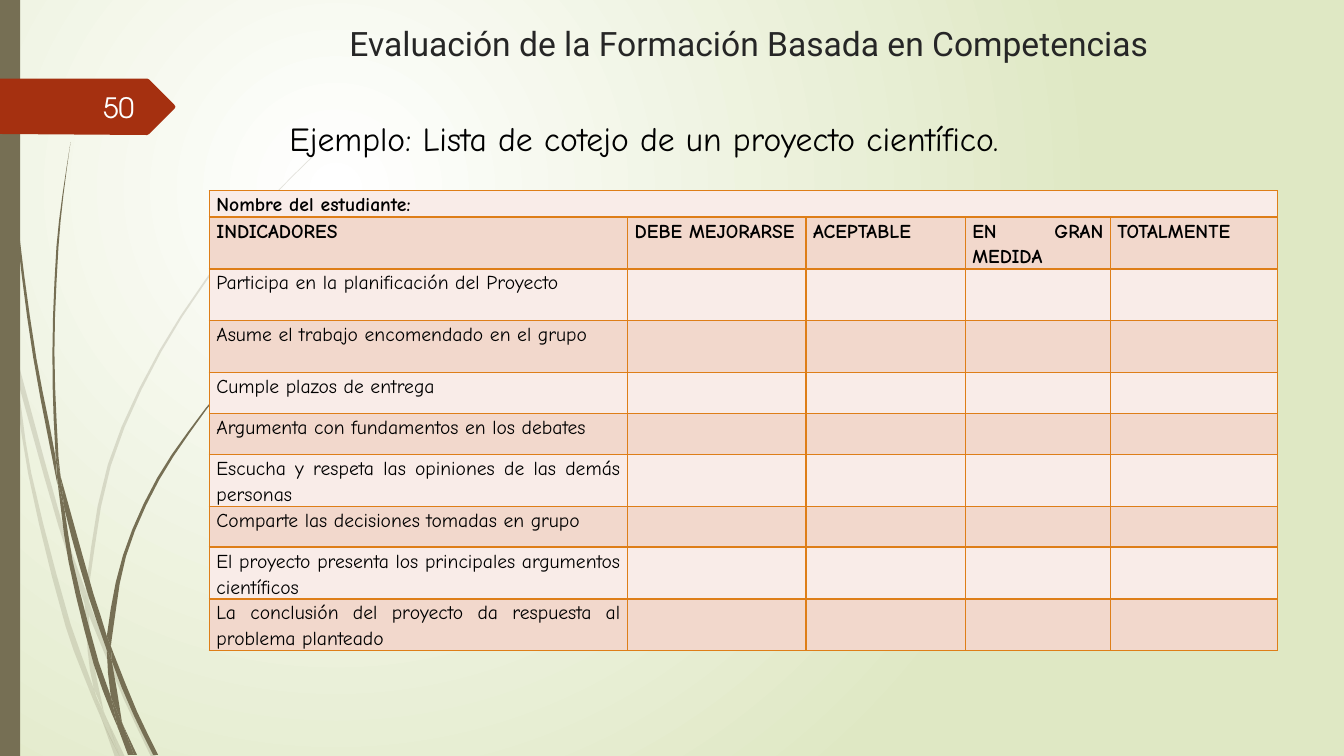
"""Builds the checklist slide for a science project assessment."""
from dataclasses import dataclass
from math import ceil
from typing import NamedTuple

from lxml import etree
from pptx import Presentation
from pptx.dml.color import RGBColor
from pptx.enum.shapes import MSO_SHAPE
from pptx.enum.text import MSO_ANCHOR, MSO_AUTO_SIZE, PP_ALIGN
from pptx.oxml.ns import qn
from pptx.util import Emu, Pt

RECTANGLE, FIXED = MSO_SHAPE.RECTANGLE, MSO_AUTO_SIZE.NONE
TOP, MIDDLE = MSO_ANCHOR.TOP, MSO_ANCHOR.MIDDLE
CENTER, RIGHT, JUSTIFY = PP_ALIGN.CENTER, PP_ALIGN.RIGHT, PP_ALIGN.JUSTIFY
GRID_COLUMNS, GRID_ROWS, CELL, TITLE_ONLY = 40, 22.5, 304800, 5
Edge = list[tuple[float, float]]


@dataclass(frozen=True)
class Theme:
    olive: str = "766F54"
    red: str = "A53010"
    glow: tuple[str, str] = ("FFFFFF", "DFE8C4")
    border: str = "DE7E18"
    bands: tuple[str, str] = ("F9ECE8", "F2D8CC")
    ink: str = "000000"
    title_ink: str = "262626"
    number_ink: str = "FEFFFF"
    body_font: str = "Comic Neue"
    heading_size: int = 24
    number_size: int = 20
    table_size: int = 14


class Area(NamedTuple):
    left: float
    top: float
    width: float
    height: float


class Blade(NamedTuple):
    left: Edge
    right: Edge


class TextStyle(NamedTuple):
    font: str
    size: int
    color: str
    align: int
    bold: bool = False
    spacing: float = 1.0


THEME = Theme()
TITLE_STYLE = TextStyle("Roboto", THEME.heading_size, THEME.title_ink, CENTER)
NUMBER_STYLE = TextStyle("TeX Gyre Adventor", THEME.number_size, THEME.number_ink, RIGHT)
EXAMPLE_STYLE = TextStyle(THEME.body_font, THEME.heading_size, THEME.ink, JUSTIFY, spacing=1.15)
INDICATOR_STYLE = EXAMPLE_STYLE._replace(size=THEME.table_size)
HEADER_STYLE = INDICATOR_STYLE._replace(bold=True)

PALE_GRASS = [
    Blade([(0, 8.97), (.3, 10.32), (.33, 10.5)], [(0, 8.46), (.27, 9.66), (.33, 10.5)]),
    Blade([(.51, 11.28), (1.74, 15.66), (2.52, 17.97)], [(.42, 10.35), (1.86, 15.6), (2.55, 17.58)]),
    Blade([(2.64, 18.3), (3.69, 20.82), (4.5, 22.53)],
          [(2.64, 17.88), (2.76, 18.21), (3.81, 20.76), (4.65, 22.53)]),
    Blade([(3.15, 21.33), (3.57, 22.53)], [(3.15, 21.33), (3.72, 22.53)]),
    Blade([(.33, 10.5), (.84, 14.1), (1.95, 18.63), (2.76, 20.79), (3.03, 21.42)],
          [(.33, 10.5), (.51, 11.28), (.93, 14.07), (2.1, 18.57), (2.79, 20.49), (3.03, 21.42)]),
    Blade([(2.52, 17.97), (2.61, 19.38), (2.79, 20.49), (3.15, 21.33)],
          [(2.52, 17.97), (2.64, 18.3), (2.73, 19.38), (3.09, 21.18), (3.15, 21.33)]),
    Blade([(9.36, 4.59), (8.04, 5.91), (6.84, 7.32), (4.74, 10.44), (3.21, 13.83), (2.55, 17.52), (2.64, 17.88)],
          [(9.36, 4.62), (8.04, 5.94), (6.87, 7.35), (4.8, 10.47), (3.3, 13.86), (2.64, 17.52), (2.64, 17.88)]),
    Blade([(3.03, 21.42), (3.42, 22.53)], [(3.03, 21.42), (3.57, 22.53)]),
    Blade([(2.55, 17.58), (2.52, 17.97), (2.64, 18.3)], [(2.55, 17.58), (2.64, 17.88), (2.64, 18.3)]),
    Blade([(2.79, 20.49), (3.03, 21.42), (3.57, 22.53)],
          [(2.79, 20.49), (2.88, 20.76), (3.15, 21.33), (3.57, 22.53)]),
]
DARK_GRASS = [
    Blade([(.09, 0), (.09, 1.44), (.21, 3.3), (.51, 6.99), (.99, 10.65), (1.71, 14.43)],
          [(.09, 0), (.15, 1.44), (.24, 3.27), (.57, 6.96), (1.08, 10.65), (1.65, 13.59), (1.71, 14.43)]),
    Blade([(1.8, 14.16), (1.92, 15.15), (2.64, 17.76), (3.18, 19.35)],
          [(1.8, 14.16), (2.79, 17.7), (3.18, 18.93), (3.18, 19.35)]),
    Blade([(3.3, 19.23), (3.33, 19.68), (3.96, 21.24), (4.56, 22.47)],
          [(3.3, 19.23), (3.39, 19.47), (4.08, 21.18), (4.71, 22.47)]),
    Blade([(1.71, 14.31), (2.04, 16.71), (2.79, 19.77), (3.33, 21.24), (3.51, 21.66)],
          [(1.71, 14.31), (1.92, 15.15), (2.16, 16.68), (2.94, 19.71), (3.3, 20.73), (3.51, 21.66)]),
    Blade([(2.1, 4.23), (1.86, 5.79), (1.68, 7.35), (1.56, 10.47), (1.65, 13.47), (1.8, 14.16)],
          [(2.1, 4.23), (1.89, 5.79), (1.74, 7.35), (1.62, 10.47), (1.74, 13.59), (1.8, 14.16)]),
    Blade([(3.66, 21.57), (3.99, 22.47)], [(3.66, 21.57), (4.08, 22.47)]),
    Blade([(1.65, 13.47), (1.71, 14.31), (1.92, 15.15)], [(1.65, 13.47), (1.8, 14.16), (1.92, 15.15)]),
    Blade([(7.8, 10.32), (6.93, 11.19), (6.12, 12.15), (4.68, 14.22), (3.66, 16.53), (3.18, 18.93), (3.3, 19.23)],
          [(7.83, 10.32), (6.93, 11.22), (6.15, 12.18), (4.74, 14.28), (3.75, 16.56), (3.33, 18.99), (3.3, 19.23)]),
    Blade([(3.51, 21.66), (3.81, 22.47)], [(3.51, 21.66), (3.93, 22.47)]),
    Blade([(3.18, 19.35), (3.3, 20.73), (3.66, 21.57)], [(3.18, 19.35), (3.33, 19.68), (3.63, 21.48), (3.66, 21.57)]),
    Blade([(3.18, 18.93), (3.18, 19.35), (3.33, 19.68)], [(3.18, 18.93), (3.3, 19.23), (3.33, 19.68)]),
    Blade([(3.3, 20.73), (3.51, 21.66), (3.9, 22.47)], [(3.3, 20.73), (3.66, 21.57), (3.99, 22.47)]),
]
BANNER = [(-.03, 3.99), (0, 2.34), (4.38, 2.34), (4.44, 2.37), (5.19, 3.12),
          (5.22, 3.18), (5.19, 3.24), (4.44, 3.99), (4.38, 4.02)]

STRIPE_AREA = Area(0, 0, .6, GRID_ROWS)
NUMBER_AREA = Area(1.74, 2.58, 2.55, 1.2)
TITLE_AREA = Area(6.54, .54, 31.5, 2.04)
EXAMPLE_AREA = Area(8.32, 3.18, 28.77, 1.71)
CHECKLIST_COLUMNS = [12.45, 5.31, 4.74, 4.32, 4.98]
ONE_LINE, TWO_LINES, HEADER_ROWS = 1.22, 1.54, 2
CHECKLIST = [
    (.78, ["Nombre del estudiante:"]),
    (TWO_LINES, ["INDICADORES", "DEBE MEJORARSE", "ACEPTABLE", "EN GRAN MEDIDA", "TOTALMENTE"]),
    (TWO_LINES, ["Participa en la planificación del Proyecto"]),
    (TWO_LINES, ["Asume el trabajo encomendado en el grupo"]),
    (ONE_LINE, ["Cumple plazos de entrega"]),
    (ONE_LINE, ["Argumenta con fundamentos en los debates"]),
    (TWO_LINES, ["Escucha y respeta las opiniones de las demás personas"]),
    (ONE_LINE, ["Comparte las decisiones tomadas en grupo"]),
    (TWO_LINES, ["El proyecto presenta los principales argumentos científicos"]),
    (TWO_LINES, ["La conclusión del proyecto da respuesta al problema planteado"]),
]
CHECKLIST_AREA = Area(6.23, 5.68, sum(CHECKLIST_COLUMNS), sum(height for height, _ in CHECKLIST))


def grid(units: float) -> Emu:
    return Emu(round(units * CELL))


def place(area: Area) -> list[Emu]:
    return [grid(side) for side in area]


def write(frame, text: str, style: TextStyle, anchor: int = TOP) -> None:
    frame.word_wrap, frame.vertical_anchor = True, anchor
    paragraph = frame.paragraphs[0]
    paragraph.alignment, paragraph.line_spacing = style.align, style.spacing
    run = paragraph.add_run()
    run.text = text
    run.font.name, run.font.size, run.font.bold = style.font, Pt(style.size), style.bold
    run.font.color.rgb = RGBColor.from_string(style.color)


def paint(shape, color: str, opacity: int = 100) -> None:
    shape.shadow.inherit = False
    shape.line.fill.background()
    shape.fill.solid()
    shape.fill.fore_color.rgb = RGBColor.from_string(color)
    if opacity < 100:
        tint = shape.fill._xPr.find(".//" + qn("a:srgbClr"))
        etree.SubElement(tint, qn("a:alpha"), val=str(opacity * 1000))


def add_outline(slide, points: Edge, color: str, opacity: int = 100) -> None:
    corners = [(grid(x), grid(y)) for x, y in points]
    builder = slide.shapes.build_freeform(*corners[0])
    builder.add_line_segments(corners[1:], close=True)
    paint(builder.convert_to_shape(), color, opacity)


def smooth(edge: Edge) -> Edge:
    neighbours = zip(edge[:1] + edge[:-1], edge[1:] + edge[-1:])
    slopes = [(x2 - x1) / (y2 - y1) for (x1, y1), (x2, y2) in neighbours]
    curve = edge[:1]
    for (x1, y1), (x2, y2), start, end in zip(edge, edge[1:], slopes, slopes[1:]):
        drop = y2 - y1
        steps = min(3, ceil(drop))
        for t in (step / steps for step in range(1, steps + 1)):
            bend = drop * t * (1 - t) * (start * (1 - t) - end * t)
            curve.append((x1 + (x2 - x1) * t * t * (3 - 2 * t) + bend, y1 + drop * t))
    return curve


def set_background(slide) -> None:
    fill = slide.background.fill
    fill.gradient()
    for position, (stop, color) in enumerate(zip(fill.gradient_stops, THEME.glow)):
        stop.color.rgb, stop.position = RGBColor.from_string(color), position
    gradient = slide._element.find(".//" + qn("a:gradFill"))
    radial = etree.Element(qn("a:path"), path="circle")
    etree.SubElement(radial, qn("a:fillToRect"), l="50000", t="50000", r="100000", b="100000")
    gradient.replace(gradient.find(qn("a:lin")), radial)


def format_cell(cell, color: str) -> None:
    for side in ("lnL", "lnR", "lnT", "lnB"):
        line = etree.SubElement(cell._tc.get_or_add_tcPr(), qn("a:" + side), w=str(Pt(1)))
        etree.SubElement(etree.SubElement(line, qn("a:solidFill")), qn("a:srgbClr"), val=THEME.border)
    cell.margin_left = cell.margin_right = grid(.21)
    cell.margin_top = cell.margin_bottom = 0
    cell.fill.solid()
    cell.fill.fore_color.rgb = RGBColor.from_string(color)


def add_checklist(slide) -> None:
    table = slide.shapes.add_table(len(CHECKLIST), len(CHECKLIST_COLUMNS), *place(CHECKLIST_AREA)).table
    table.first_row = table.horz_banding = False
    for column, width in zip(table.columns, CHECKLIST_COLUMNS):
        column.width = grid(width)
    for i, (height, texts) in enumerate(CHECKLIST):
        table.rows[i].height = grid(height)
        for cell in table.rows[i].cells:
            format_cell(cell, THEME.bands[i % 2])
        for cell, text in zip(table.rows[i].cells, texts):
            write(cell.text_frame, text, HEADER_STYLE if i < HEADER_ROWS else INDICATOR_STYLE)
    table.cell(0, 0).merge(table.cell(0, len(CHECKLIST_COLUMNS) - 1))


def main() -> None:
    deck = Presentation()
    deck.slide_width, deck.slide_height = grid(GRID_COLUMNS), grid(GRID_ROWS)
    slide = deck.slides.add_slide(deck.slide_layouts[TITLE_ONLY])
    set_background(slide)
    for grass, opacity in ((PALE_GRASS, 20), (DARK_GRASS, 100)):
        for blade in grass:
            add_outline(slide, smooth(blade.left) + smooth(blade.right)[::-1], THEME.olive, opacity)
    paint(slide.shapes.add_shape(RECTANGLE, *place(STRIPE_AREA)), THEME.olive)
    add_outline(slide, BANNER, THEME.red)
    add_checklist(slide)
    number = slide.shapes.add_textbox(*place(NUMBER_AREA))
    write(number.text_frame, "50", NUMBER_STYLE, MIDDLE)
    title = slide.shapes.title
    title.left, title.top, title.width, title.height = place(TITLE_AREA)
    title.text_frame.auto_size = FIXED
    write(title.text_frame, "Evaluación de la Formación Basada en Competencias", TITLE_STYLE)
    example = slide.shapes.add_textbox(*place(EXAMPLE_AREA))
    write(example.text_frame, "Ejemplo: Lista de cotejo de un proyecto científico.", EXAMPLE_STYLE)
    deck.save("out.pptx")


if __name__ == "__main__":
    main()
